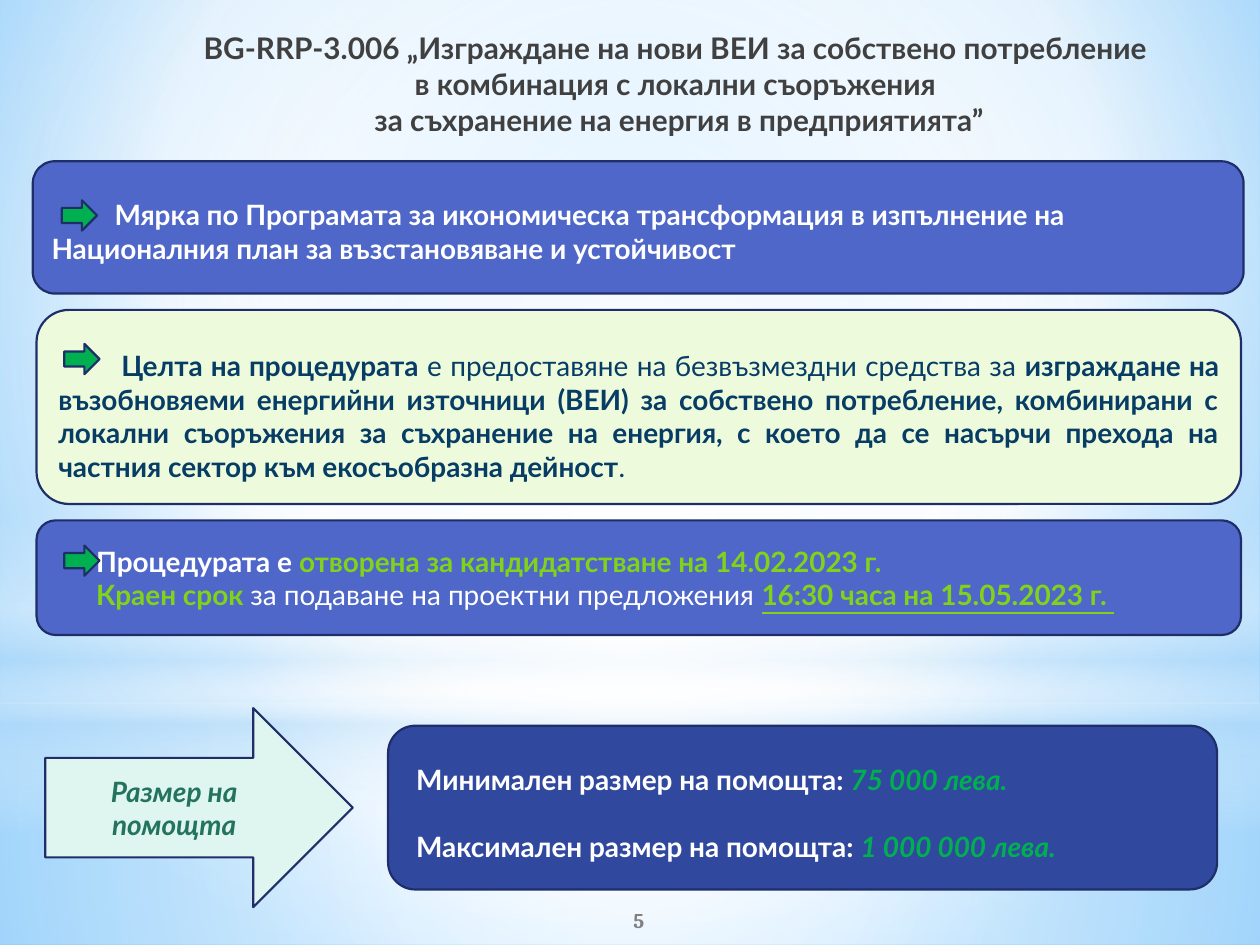
"""Build the slide on the BG-RRP-3.006 procedure: purpose, deadlines and size of the aid."""
from lxml.etree import fromstring
from pptx import Presentation
from pptx.dml.color import RGBColor
from pptx.enum.shapes import MSO_SHAPE as Form
from pptx.enum.text import MSO_ANCHOR as Anchor, PP_ALIGN as Align
from pptx.util import Inches, Pt

NS = "http://schemas.openxmlformats.org/drawingml/2006/main"
COLORS = {
    "white": "FFFFFF", "sky": "B4DCFA", "edge": "1F2E69", "blue": "4E67C8",
    "deep": "31489F", "lime": "EDFBDC", "mint": "DFF5EF", "green": "00B050",
    "navy": "073C65", "grass": "81D31A", "pine": "23735D", "dark": "404040",
    "gray": "808080", "light_sky": "9ED5FF", "strong_sky": "5BB9FF",
}

deck = Presentation()
deck.slide_width, deck.slide_height = Inches(10), Inches(7.5)
page = deck.slides.add_slide(deck.slide_layouts[6])
column, row = deck.slide_width / 100, deck.slide_height / 75


def gradient(stops, focus=None):
    """Return a gradient fill, circular around a focus or running downwards."""
    marks = "".join(
        f'<a:gs pos="{place * 1000}"><a:srgbClr val="{COLORS[color]}">'
        f'<a:alpha val="{alpha * 1000}"/></a:srgbClr></a:gs>'
        for place, color, alpha in stops)
    course = '<a:lin ang="5400000" scaled="0"/>'
    if focus:
        sides = " ".join(f'{side}="{share * 1000}"' for side, share in zip("ltrb", focus))
        course = f'<a:path path="circle"><a:fillToRect {sides}/></a:path>'
    return fromstring(f'<a:gradFill xmlns:a="{NS}" rotWithShape="1">'
                      f'<a:gsLst>{marks}</a:gsLst>{course}</a:gradFill>')


def add_box(form, place, fill=None, lines=(), size=16, font="Lato", align=Align.LEFT):
    """Add a shape or, without a form, a text box; place counts columns and rows."""
    left, top, width, height = place
    area = [round(n) for n in (left * column, top * row, width * column, height * row)]
    if form is None:
        box = page.shapes.add_textbox(*area)
    else:
        box = page.shapes.add_shape(form, *area)
        box.shadow.inherit = False
    if fill:
        box.fill.solid()
        box.fill.fore_color.rgb = RGBColor.from_string(COLORS[fill])
        box.line.color.rgb = RGBColor.from_string(COLORS["edge"])
        box.line.width = Pt(1.25)
    frame = box.text_frame
    frame.word_wrap = True
    for number, spans in enumerate(lines):
        para = frame.add_paragraph() if number else frame.paragraphs[0]
        para.alignment = align
        for words, color, style in spans:
            span = para.add_run()
            span.text = words
            span.font.name, span.font.size = font, Pt(size)
            span.font.color.rgb = RGBColor.from_string(COLORS[color])
            span.font.bold = "b" in style
            span.font.italic = "i" in style
            span.font.underline = "u" in style
    return box


background = page.background.fill
background.solid()
sheet = page.background._cSld.bg.bgPr
sheet.replace(sheet[0], gradient(
    [(0, "light_sky", 100), (60, "white", 100), (100, "strong_sky", 100)], (20, 10, 20, 60)))

center = (50, 50, 50, 50)
glows = [
    (Form.RECTANGLE, (0, 55.8, 100, 19.2), center,
     [(0, "white", 91), (37, "white", 76), (100, "sky", 79)]),
    (Form.RECTANGLE, (0, 0, 100, 55.8), center,
     [(0, "white", 89), (48, "white", 62), (100, "sky", 79)]),
    (Form.RECTANGLE, (0, 41.2, 100, 25), None,
     [(0, "white", 0), (29, "white", 30), (45, "sky", 40),
      (55, "white", 26), (65, "sky", 60), (100, "white", 0)]),
    (Form.OVAL, (0, 17.5, 100, 55.8), center, [(0, "white", 100), (56, "white", 0)]),
]
for form, place, focus, stops in glows:
    glow = add_box(form, place)
    glow.line.fill.background()
    glow.fill.solid()
    paint = glow.fill._xPr.find(f"{{{NS}}}solidFill")
    paint.getparent().replace(paint, gradient(stops, focus))

add_box(None, (6.3, 1.9, 95.2, 9.6), size=17, align=Align.CENTER, lines=[
    [(words, "dark", "b")] for words in (
        "BG-RRP-3.006 „Изграждане на нови ВЕИ за собствено потребление ",
        "в комбинация с локални съоръжения ",
        "за съхранение на енергия в предприятията”")])

measure = add_box(Form.ROUNDED_RECTANGLE, (2.6, 12.8, 96.1, 10.5), "blue", [[
    ("Мярка по Програмата за икономическа трансформация в изпълнение на "
     "Националния план за възстановяване и устойчивост", "white", "b")]])
purpose = add_box(Form.ROUNDED_RECTANGLE, (2.9, 24.6, 95.6, 15.4), "lime", [[
    ("Целта на процедурата ", "navy", "b"),
    ("е предоставяне на безвъзмездни средства за ", "navy", ""),
    ("изграждане на възобновяеми енергийни източници (ВЕИ) за собствено потребление, "
     "комбинирани с локални съоръжения за съхранение на енергия, с което да се насърчи "
     "прехода на частния сектор към екосъобразна дейност", "navy", "b"),
    (".", "navy", "")]], align=Align.JUSTIFY)
deadline = add_box(Form.ROUNDED_RECTANGLE, (2.9, 41.3, 95.6, 9.1), "blue", [
    [("Процедурата е ", "white", "b"),
     ("отворена за кандидатстване на 14.02.2023 г. ", "grass", "b")],
    [("Краен срок ", "grass", "b"),
     ("за подаване на проектни предложения ", "white", ""),
     ("16:30 часа на 15.05.2023 г. ", "grass", "bu")]], align=Align.JUSTIFY)
add_box(Form.RIGHT_ARROW, (3.6, 56.2, 24.4, 15.8), "mint",
        [[("Размер на помощта", "pine", "bi")]], align=Align.CENTER)
amounts = add_box(Form.ROUNDED_RECTANGLE, (30.8, 57.6, 65.8, 13), "deep", [
    [("Минимален размер на помощта: ", "white", "b"), ("75 000 лева.", "green", "bi")],
    [("Максимален размер на помощта: ", "white", "b"), ("1 000 000 лева.", "green", "bi")]])

for box, drop in ((measure, 0.06), (purpose, 0.14), (amounts, 0.08)):
    box.text_frame.margin_top = Inches(0.05 + drop)
for box in (measure, purpose):
    box.text_frame.paragraphs[0]._p.get_or_add_pPr().set("indent", str(Inches(0.5)))
deadline.text_frame.margin_left = Inches(0.43)
amounts.text_frame.margin_left = Inches(0.16)
amounts.text_frame.paragraphs[1].space_before = Pt(19)

number = add_box(None, (40.7, 71, 20, 4), lines=[[("5", "gray", "b")]],
                 size=12, font="Cambria", align=Align.CENTER)
number.text_frame.vertical_anchor = Anchor.MIDDLE

for left, top in ((4.9, 15.9), (5.1, 27.3), (5.1, 43.3)):
    add_box(Form.RIGHT_ARROW, (left, top, 2.8, 2.4), "green")

deck.save("out.pptx")
